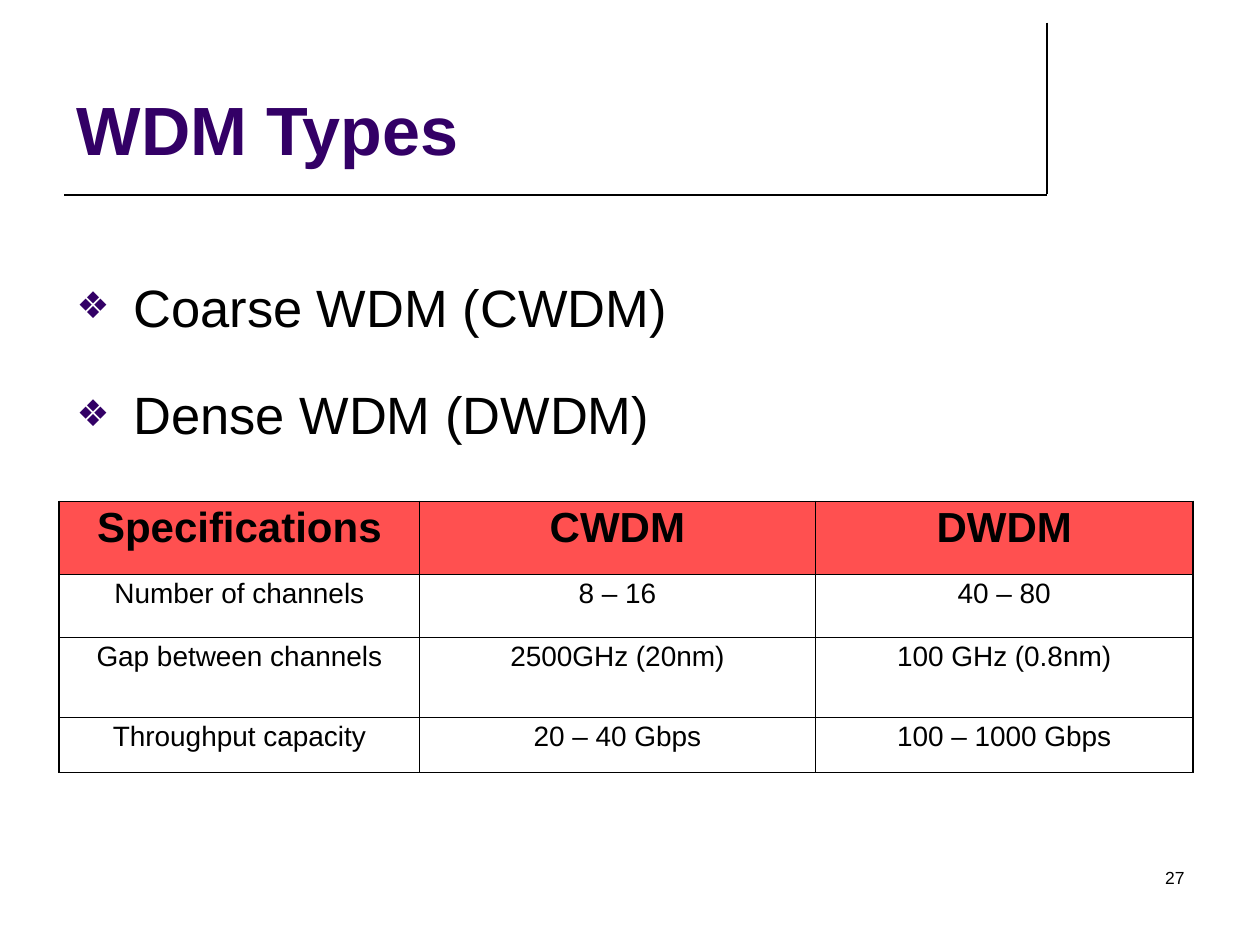
from lxml import etree
from pptx import Presentation
from pptx.dml.color import RGBColor
from pptx.enum.shapes import MSO_CONNECTOR
from pptx.enum.text import MSO_ANCHOR, PP_ALIGN
from pptx.oxml.ns import qn
from pptx.util import Inches, Pt

STRAIGHT = MSO_CONNECTOR.STRAIGHT
TOP, BOTTOM = MSO_ANCHOR.TOP, MSO_ANCHOR.BOTTOM
LEFT, CENTER, RIGHT = PP_ALIGN.LEFT, PP_ALIGN.CENTER, PP_ALIGN.RIGHT
COLUMNS, ROWS = 100, 75
BLACK, PURPLE, RED = "000000", "330066", "FF5050"
THICK, THIN = 1.08, 0.45

SPECIFICATIONS = [
    ("Specifications", "CWDM", "DWDM"),
    ("Number of channels", "8 – 16", "40 – 80"),
    ("Gap between channels", "2500GHz (20nm)", "100 GHz (0.8nm)"),
    ("Throughput capacity", "20 – 40 Gbps", "100 – 1000 Gbps"),
]


def color(value):
    """Turn a hex string into a colour."""
    return RGBColor.from_string(value)


def child(parent, tag, **attributes):
    """Append a DrawingML element to its parent."""
    return etree.SubElement(parent, qn(f"a:{tag}"), attributes)


class Deck:
    """Hold the style and the current slide, measured on a 100 by 75 grid."""

    font = "Arial"

    def __init__(self, width, height):
        """Start a presentation with one blank slide."""
        self.presentation = Presentation()
        self.presentation.slide_width = Inches(width)
        self.presentation.slide_height = Inches(height)
        self.slide = self.presentation.slides.add_slide(self.presentation.slide_layouts[6])

    def x(self, columns):
        """Convert grid columns to a length."""
        return round(self.presentation.slide_width * columns / COLUMNS)

    def y(self, rows):
        """Convert grid rows to a length."""
        return round(self.presentation.slide_height * rows / ROWS)

    def box(self, left, top, width, height):
        """Convert a grid rectangle to lengths."""
        return self.x(left), self.y(top), self.x(width), self.y(height)

    def style(self, paragraph, size, ink=BLACK, bold=False, align=LEFT):
        """Set the font and alignment of a paragraph."""
        paragraph.alignment = align
        paragraph.font.name = self.font
        paragraph.font.size = Pt(size)
        paragraph.font.bold = bold
        paragraph.font.color.rgb = color(ink)

    def line(self, left, top, right, bottom):
        """Draw a thin black rule."""
        rule = self.slide.shapes.add_connector(
            STRAIGHT, self.x(left), self.y(top), self.x(right), self.y(bottom))
        rule.line.color.rgb = color(BLACK)
        rule.line.width = Pt(1)
        child(rule._element.spPr, "effectLst")

    def frame(self, area, anchor=TOP):
        """Add a wrapping text box and return its text frame."""
        frame = self.slide.shapes.add_textbox(*self.box(*area)).text_frame
        frame.word_wrap = True
        frame.vertical_anchor = anchor
        return frame

    def text(self, area, words, size, anchor=TOP, **look):
        """Add a single line of text."""
        paragraph = self.frame(area, anchor).paragraphs[0]
        paragraph.text = words
        self.style(paragraph, size, **look)

    def bullets(self, area, items, size):
        """Add a list with purple diamond bullets."""
        frame = self.frame(area)
        for index, item in enumerate(items):
            paragraph = frame.add_paragraph() if index else frame.paragraphs[0]
            paragraph.text = item
            properties = paragraph._p.get_or_add_pPr()
            properties.set("marL", str(self.x(4.6)))
            properties.set("indent", str(-self.x(4.5)))
            child(child(properties, "buClr"), "srgbClr", val=PURPLE)
            child(properties, "buSzPct", val="70000")
            child(properties, "buFont", typeface=self.font)
            child(properties, "buChar", char="❖")
            paragraph.line_spacing = 1.5
            paragraph.space_before = Pt(7.5 if index else 0)
            self.style(paragraph, size)

    def borders(self, cell, **widths):
        """Draw the black borders of a cell."""
        properties = cell._tc.get_or_add_tcPr()
        for side, width in widths.items():
            edge = child(properties, f"ln{side}", w=str(Pt(width)))
            child(child(edge, "solidFill"), "srgbClr", val=BLACK)

    def table(self, area, data, widths, heights):
        """Add a table with a red header and a heavier frame."""
        last = len(widths) - 1
        table = self.slide.shapes.add_table(len(data), len(widths), *self.box(*area)).table
        table.first_row = table.horz_banding = False
        for column, width in zip(table.columns, widths):
            column.width = self.x(width)
        for r, (row, height, values) in enumerate(zip(table.rows, heights, data)):
            row.height = self.y(height)
            header = r == 0
            for c, (cell, value) in enumerate(zip(row.cells, values)):
                self.borders(cell, L=THIN if c else THICK, R=THICK if c == last else THIN,
                             T=THICK if header else THIN, B=THIN)
                if header:
                    cell.fill.solid()
                    cell.fill.fore_color.rgb = color(RED)
                else:
                    cell.fill.background()
                paragraph = cell.text_frame.paragraphs[0]
                paragraph.text = value
                paragraph.line_spacing = 0.93
                self.style(paragraph, 24 if header else 16, bold=header, align=CENTER)

    def save(self):
        """Write the presentation."""
        self.presentation.save("out.pptx")


def main():
    """Build the slide on WDM types."""
    deck = Deck(10, 7.5)
    deck.line(83.1, 1.8, 83.1, 15.4)
    deck.line(5.1, 15.45, 83.1, 15.45)
    deck.text((5.1, 1.3, 77.9, 12.6), "WDM Types", 39, anchor=BOTTOM, ink=PURPLE, bold=True)
    deck.bullets((5, 18.8, 90, 48.2), ["Coarse WDM (CWDM)", "Dense WDM (DWDM)"], 30)
    deck.text((71.7, 68.3, 23.3, 5), "27", 10, align=RIGHT)
    deck.table((4.7, 39.8, 90, 21.5), SPECIFICATIONS,
               widths=(28.6, 31.4, 30), heights=(5.8, 5, 6.3, 4.4))
    deck.save()


if __name__ == "__main__":
    main()
